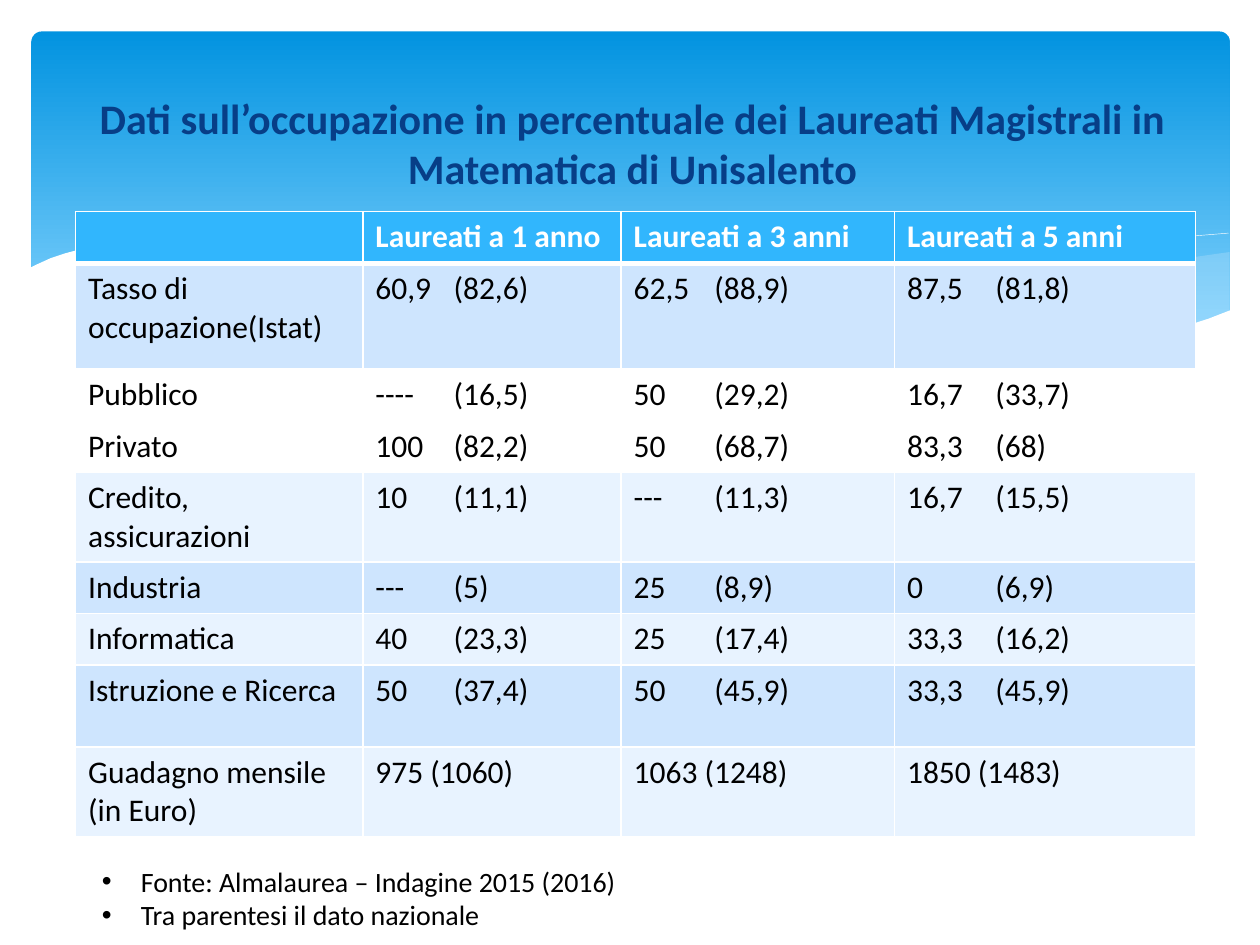
from lxml import etree
from pptx import Presentation
from pptx import util as u
from pptx.dml.color import RGBColor
from pptx.enum import shapes, text
from pptx.oxml import ns

FONT = "Calibri"
WHITE, BLACK, NAVY = "FFFFFF", "000000", "073E87"
HEADER, BAND, PALE = "31B6FD", "CEE5FE", "E8F3FF"

COLUMN_WIDTHS = [2.28, 2.05, 2.17, 2.39]
TAB_STOPS = [0, 0.62, 0.64, 0.7]
HEADINGS = ["", "Laureati a 1 anno", "Laureati a 3 anni", "Laureati a 5 anni"]
ROWS = [
    (0.84, BAND, ["Tasso di occupazione(Istat)", "60,9\t(82,6)", "62,5\t(88,9)", "87,5\t(81,8)"]),
    (0.41, WHITE, ["Pubblico", "----\t(16,5)", "50\t(29,2)", "16,7\t(33,7)"]),
    (0.41, WHITE, ["Privato", "100\t(82,2)", "50\t(68,7)", "83,3\t(68)"]),
    (0.71, PALE, ["Credito, assicurazioni", "10\t(11,1)", "---\t(11,3)", "16,7\t(15,5)"]),
    (0.41, BAND, ["Industria", "---\t(5)", "25\t(8,9)", "0\t(6,9)"]),
    (0.41, PALE, ["Informatica", "40\t(23,3)", "25\t(17,4)", "33,3\t(16,2)"]),
    (0.65, BAND, ["Istruzione e Ricerca", "50\t(37,4)", "50\t(45,9)", "33,3\t(45,9)"]),
    (0.71, PALE, ["Guadagno mensile (in Euro)", "975 (1060)", "1063 (1248)", "1850 (1483)"]),
]

RIGHT_WAVE = [
    (9.76, 2), (9.48, 2.04), (9.06, 2.13), (8.61, 2.23), (8.05, 2.37), (7.53, 2.48),
    (7.06, 2.57), (6.61, 2.65), (7.05, 2.71), (7.45, 2.75), (7.81, 2.77), (8.14, 2.78),
    (8.44, 2.77), (8.72, 2.74), (8.97, 2.7), (9.21, 2.65), (9.49, 2.57), (9.76, 2.47),
]
MIDDLE_WAVE = [
    (8.93, 2.73), (8.37, 2.65), (7.75, 2.54), (7.06, 2.4), (6.29, 2.22), (5.84, 2.11),
    (5.41, 2.03), (5.02, 1.96), (4.65, 1.91), (4.2, 1.87), (3.8, 1.85), (3.44, 1.86),
    (3.13, 1.88), (2.86, 1.91), (3.23, 1.96), (3.62, 2.03), (4.04, 2.11), (4.49, 2.22),
    (5.3, 2.4), (6.01, 2.55), (6.5, 2.64), (6.95, 2.7), (7.36, 2.75), (7.73, 2.77),
    (8.07, 2.78), (8.38, 2.78), (8.67, 2.76), (8.93, 2.73),
]
LONG_CREST = [
    (3.09, 1.95), (3.28, 1.92), (3.53, 1.89), (3.87, 1.87), (4.16, 1.87), (4.5, 1.88),
    (4.89, 1.9), (5.33, 1.94), (5.82, 2), (6.36, 2.08), (6.95, 2.19), (7.6, 2.33),
    (8.31, 2.51), (9.07, 2.72),
]
SHORT_CREST = [
    (6.13, 2.57), (6.53, 2.46), (6.95, 2.35), (7.48, 2.23), (8.06, 2.1), (8.66, 1.99),
    (8.95, 1.94), (9.24, 1.9), (9.51, 1.87), (9.75, 1.85),
]
WHITE_WAVE = [
    (9.77, 2.46), (9.59, 2.53), (9.4, 2.59), (9.1, 2.67), (8.75, 2.73), (8.37, 2.76),
    (8.09, 2.77), (7.78, 2.76), (7.44, 2.74), (7.08, 2.7), (6.68, 2.65), (6.26, 2.58),
    (5.79, 2.5), (5.29, 2.39), (4.75, 2.27), (4.18, 2.13), (3.65, 2.02), (3.16, 1.94),
    (2.71, 1.88), (2.3, 1.85), (1.93, 1.84), (1.61, 1.84), (1.32, 1.86), (1.06, 1.89),
    (0.85, 1.93), (0.67, 1.97), (0.52, 2.01), (0.4, 2.05), (0.29, 2.1), (0.23, 2.13),
    (0.23, 3.29), (9.77, 3.29),
]


def colour(value):
    return RGBColor.from_string(value)


def add_element(parent, tag, **attributes):
    return etree.SubElement(parent, ns.qn(tag), {k: str(v) for k, v in attributes.items()})


def set_font(paragraph, size, value, bold=False):
    font = paragraph.font
    font.name, font.size, font.bold = FONT, u.Pt(size), bold
    font.color.rgb = colour(value)


def add_banner(page):
    banner = page.shapes.add_shape(
        shapes.MSO_SHAPE.ROUNDED_RECTANGLE,
        u.Inches(0.25), u.Inches(0.25), u.Inches(9.51), u.Inches(2.7))
    banner.adjustments[0] = 0.03
    banner.shadow.inherit = False
    banner.line.fill.background()
    banner.fill.gradient()
    banner.fill.gradient_angle = 270
    for stop, position, value in zip(banner.fill.gradient_stops, (0, 0.9), ("0293E0", "83D3FE")):
        stop.position = position
        stop.color.rgb = colour(value)


def add_outline(page, points, closed):
    corners = [(u.Inches(x), u.Inches(y)) for x, y in points]
    builder = page.shapes.build_freeform(*corners[0])
    builder.add_line_segments(corners[1:], close=closed)
    outline = builder.convert_to_shape()
    outline.shadow.inherit = False
    return outline


def add_wave(page, points, value, opacity=100):
    wave = add_outline(page, points, True)
    wave.line.fill.background()
    wave.fill.solid()
    wave.fill.fore_color.rgb = colour(value)
    if opacity < 100:
        tint = wave.fill._xPr.find(".//" + ns.qn("a:srgbClr"))
        add_element(tint, "a:alpha", val=opacity * 1000)


def add_crest(page, points):
    crest = add_outline(page, points, False)
    crest.fill.background()
    crest.line.color.rgb = colour(WHITE)
    crest.line.width = u.Pt(0.25)


def set_borders(cell, bottom):
    properties = cell._tc.get_or_add_tcPr()
    for side, width in zip("LRTB", (1, 1, 1, bottom)):
        line = add_element(properties, "a:ln" + side, w=u.Pt(width))
        fill = add_element(line, "a:solidFill")
        add_element(fill, "a:srgbClr", val=WHITE)


def fill_cell(cell, words, background, tab, heading):
    set_borders(cell, 3 if heading else 1)
    cell.fill.solid()
    cell.fill.fore_color.rgb = colour(background)
    paragraph = cell.text_frame.paragraphs[0]
    paragraph.text = words
    if "\t" in words:
        tabs = add_element(paragraph._p.get_or_add_pPr(), "a:tabLst")
        add_element(tabs, "a:tab", pos=u.Inches(tab), algn="l")
    set_font(paragraph, 18, WHITE if heading else BLACK, heading)


def add_employment_table(page):
    rows = [(0.41, HEADER, HEADINGS)] + ROWS
    table = page.shapes.add_table(
        len(rows), len(COLUMN_WIDTHS), u.Inches(0.6), u.Inches(1.68),
        u.Inches(sum(COLUMN_WIDTHS)), u.Inches(sum(row[0] for row in rows))).table
    table.horz_banding = False
    for column, width in zip(table.columns, COLUMN_WIDTHS):
        column.width = u.Inches(width)
    for index, (height, background, values) in enumerate(rows):
        table.rows[index].height = u.Inches(height)
        for cell, words, tab in zip(table.rows[index].cells, values, TAB_STOPS):
            fill_cell(cell, words, background, tab, index == 0)


def set_title(page, words):
    title = page.shapes.title
    title.left, title.top = u.Inches(0.54), u.Inches(0.68)
    title.width, title.height = u.Inches(8.96), u.Inches(0.91)
    title.text_frame.text = words
    paragraph = title.text_frame.paragraphs[0]
    paragraph.alignment = text.PP_ALIGN.CENTER
    set_font(paragraph, 24, NAVY, True)
    page.shapes._spTree.append(title._element)


def add_notes_list(page, lines):
    box = page.shapes.add_textbox(u.Inches(0.71), u.Inches(6.81), u.Inches(4.37), u.Inches(0.64))
    frame = box.text_frame
    frame.word_wrap = False
    frame.text = "\n".join(lines)
    for paragraph in frame.paragraphs:
        properties = paragraph._p.get_or_add_pPr()
        properties.set("marL", str(u.Inches(0.31)))
        properties.set("indent", str(u.Inches(-0.31)))
        add_element(properties, "a:buFont", typeface="Arial")
        add_element(properties, "a:buChar", char="•")
        set_font(paragraph, 16, BLACK)


def main():
    deck = Presentation()
    deck.slide_width, deck.slide_height = u.Inches(10), u.Inches(7.5)
    page = deck.slides.add_slide(deck.slide_layouts.get_by_name("Title Only"))
    add_banner(page)
    add_wave(page, RIGHT_WAVE, "C6E7FC", 29)
    add_wave(page, MIDDLE_WAVE, "C6E7FC", 40)
    add_crest(page, LONG_CREST)
    add_crest(page, SHORT_CREST)
    add_wave(page, WHITE_WAVE, WHITE)
    add_employment_table(page)
    set_title(page, "Dati sull’occupazione in percentuale dei Laureati Magistrali in Matematica di Unisalento")
    add_notes_list(page, ["Fonte: Almalaurea – Indagine 2015 (2016)", "Tra parentesi il dato nazionale"])
    deck.save("out.pptx")


if __name__ == "__main__":
    main()
